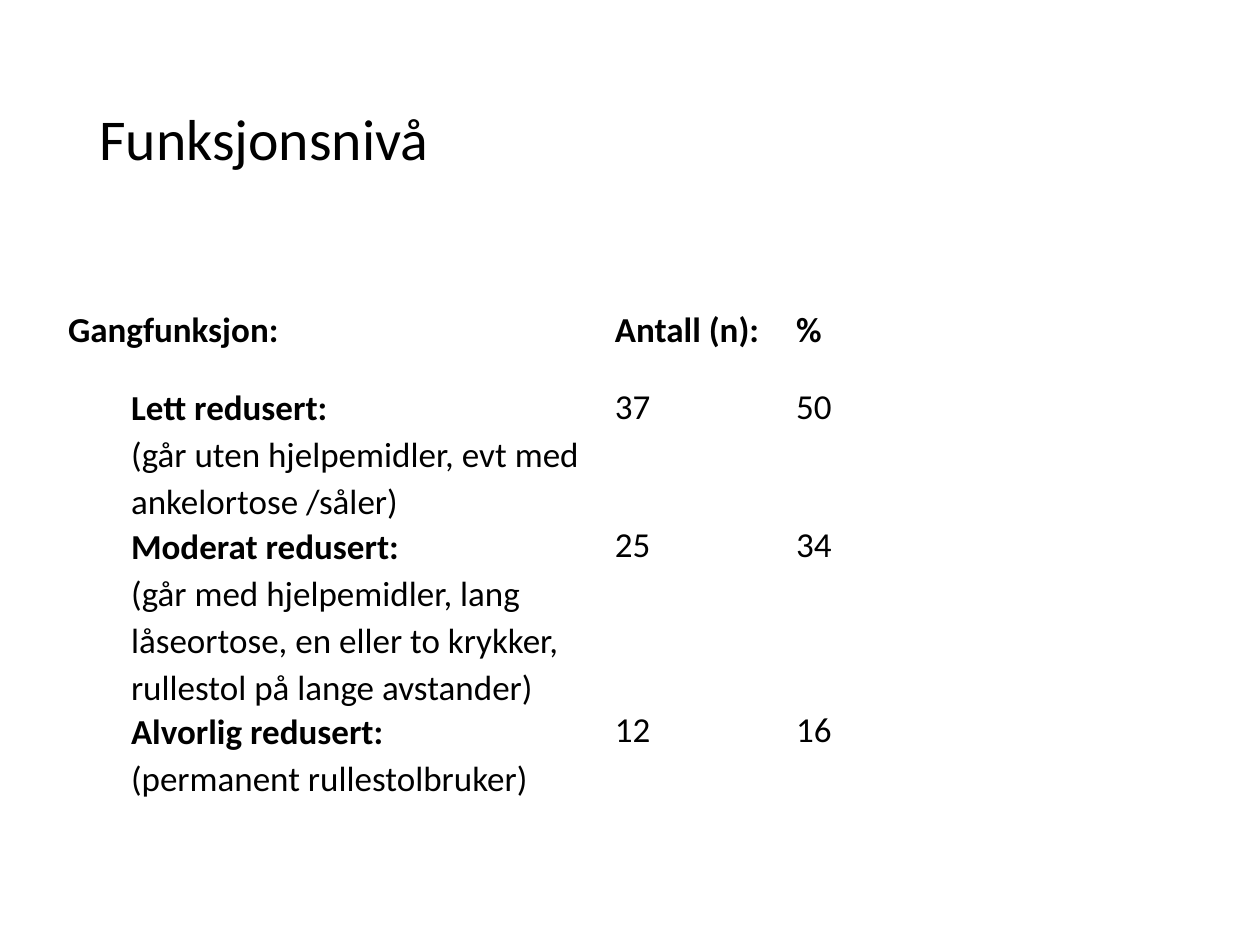
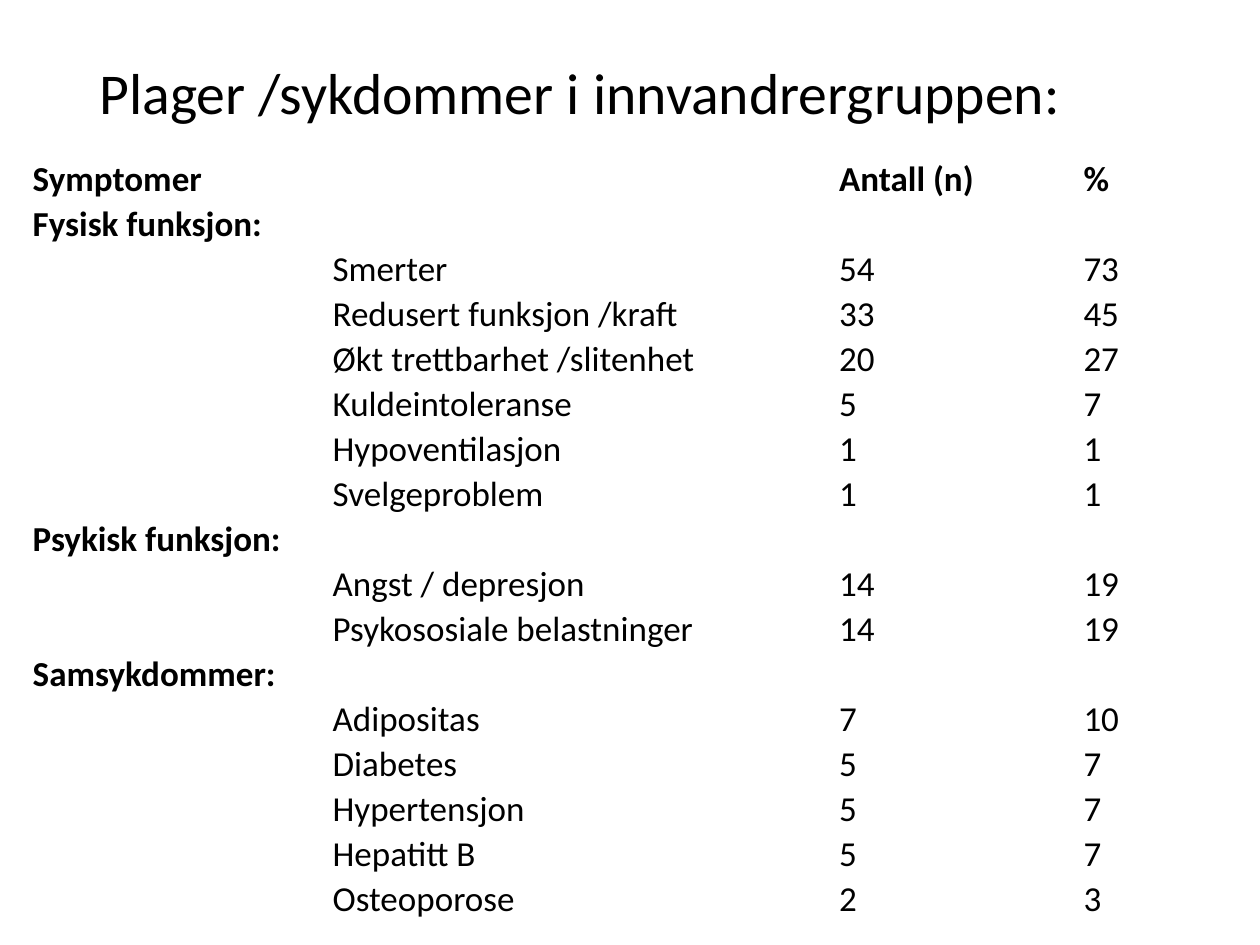
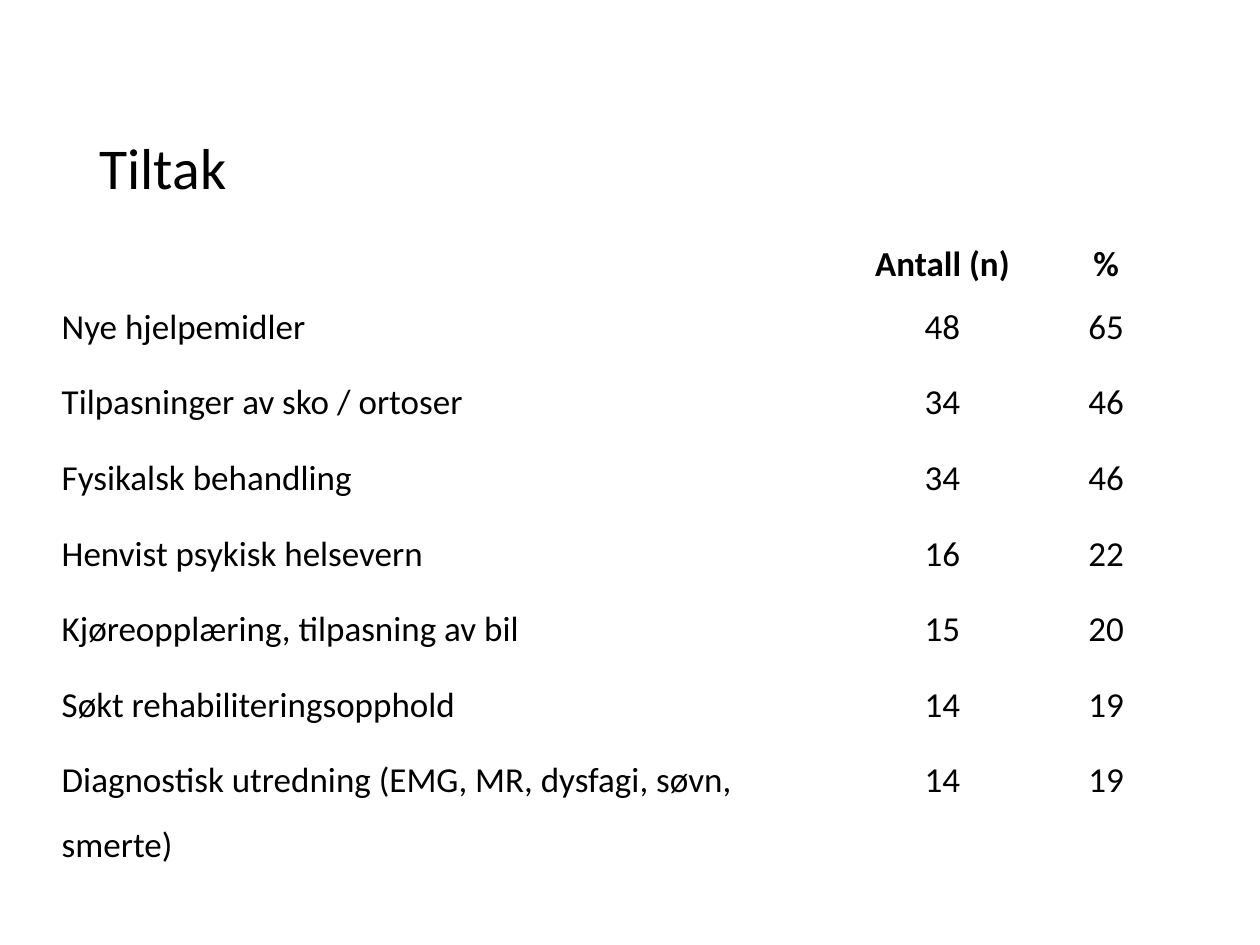
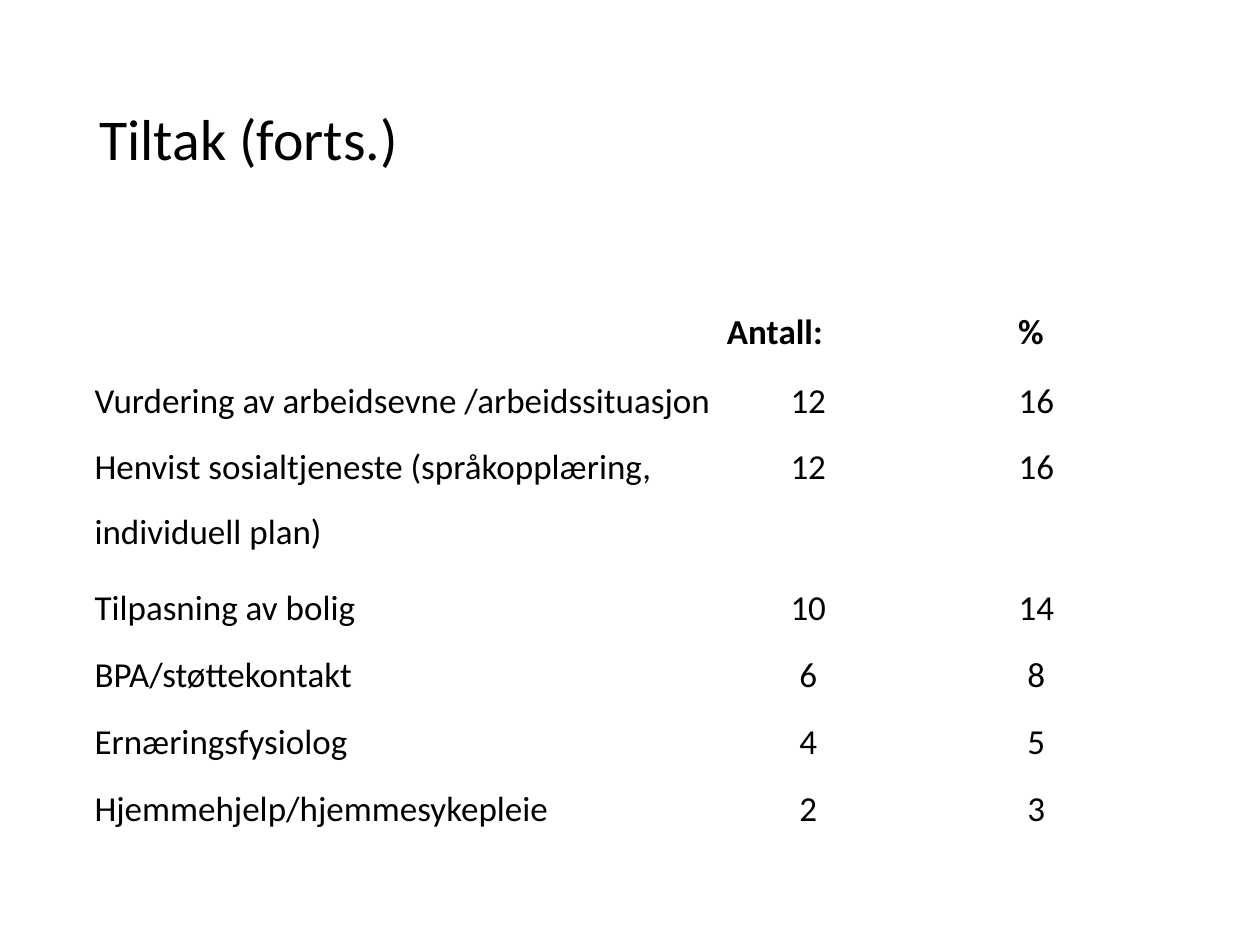
"""Build four slides of tables on function level, symptoms and measures."""
from dataclasses import dataclass, replace

from pptx import Presentation
from pptx.dml.color import RGBColor
from pptx.enum.text import MSO_ANCHOR, PP_ALIGN as Align
from pptx.slide import Slide
from pptx.table import _Cell as Cell
from pptx.util import Inches, Pt

COLORS = {"text": "000000", "background": "FFFFFF"}
FONT = "Calibri"
TITLE_SIZE = 33
TABLE_SIZE = 20
TITLE_LEFT, TITLE_WIDTH = 0.69, 8.62


@dataclass(frozen=True)
class ParaStyle:
    bold: bool = False
    spacing: float = 1.07
    after: float = 8
    align: Align = Align.LEFT
    indent: float = 0
    size: float = TABLE_SIZE


@dataclass(frozen=True)
class TableSlide:
    title: str
    title_top: float
    title_height: float
    left: float
    top: float
    columns: tuple[float, ...]
    heights: tuple[float, ...]
    header_styles: tuple[tuple[ParaStyle, ...], ...]
    body_styles: tuple[tuple[ParaStyle, ...], ...]
    rows: tuple[tuple[str, ...], ...]
    header_margins: tuple[float, float] = (0.06, 0)


TITLE = ParaStyle(spacing=0.9, after=0, size=TITLE_SIZE)
PLAIN = ParaStyle()
BOLD = ParaStyle(bold=True)
LEVEL = ParaStyle(bold=True, spacing=1.1, after=0, indent=0.5)
LEVEL_NOTE = replace(LEVEL, bold=False, after=6)
MEASURE = ParaStyle(spacing=1.5)
MEASURE_VALUE = replace(MEASURE, align=Align.CENTER)
MEASURE_HEAD = replace(MEASURE_VALUE, bold=True, spacing=2.0)
COUNT_HEAD = ParaStyle(bold=True, spacing=1.0, after=0)
PERCENT_HEAD = replace(COUNT_HEAD, indent=0.88)
MEASURE_COLUMNS = ((MEASURE,), (MEASURE_VALUE,), (MEASURE_VALUE,))

SLIDES = (
    TableSlide(
        "Funksjonsnivå", 0.4, 1.45, 0.48, 2.43,
        (4.34, 1.44, 2.84), (0.61, 1.02, 1.39, 0.92),
        ((BOLD,),) * 3,
        ((LEVEL, LEVEL_NOTE), (PLAIN,), (PLAIN,)),
        (
            ("Gangfunksjon:", "Antall (n):", "%"),
            ("Lett redusert:\n(går uten hjelpemidler, evt med ankelortose /såler)", "37", "50"),
            ("Moderat redusert:\n(går med hjelpemidler, lang låseortose, en eller to krykker, "
             "rullestol på lange avstander)", "25", "34"),
            ("Alvorlig redusert:\n(permanent rullestolbruker)", "12", "16"),
        ),
    ),
    TableSlide(
        "Plager /sykdommer i innvandrergruppen:", 0.29, 0.94, 0.2, 1.23,
        (2.38, 4.02, 1.94, 1.19), (0.35,) * 17,
        ((BOLD,),) * 4,
        ((BOLD,), (PLAIN,), (PLAIN,), (PLAIN,)),
        (
            ("Symptomer", "", "Antall (n)", "%"),
            ("Fysisk funksjon:", "", "", ""),
            ("", "Smerter", "54", "73"),
            ("", "Redusert funksjon /kraft", "33", "45"),
            ("", "Økt trettbarhet /slitenhet", "20", "27"),
            ("", "Kuldeintoleranse", "5", "7"),
            ("", "Hypoventilasjon", "1", "1"),
            ("", "Svelgeproblem", "1", "1"),
            ("Psykisk funksjon:", "", "", ""),
            ("", "Angst / depresjon", "14", "19"),
            ("", "Psykososiale belastninger", "14", "19"),
            ("Samsykdommer:", "", "", ""),
            ("", "Adipositas", "7", "10"),
            ("", "Diabetes", "5", "7"),
            ("", "Hypertensjon", "5", "7"),
            ("", "Hepatitt B", "5", "7"),
            ("", "Osteoporose", "2", "3"),
        ),
    ),
    TableSlide(
        "Tiltak", 0.82, 1.07, 0.43, 1.59,
        (6.37, 1.36, 1.24), (0.6,) * 8,
        ((MEASURE_HEAD,),) * 3,
        MEASURE_COLUMNS,
        (
            ("", "Antall (n)", "%"),
            ("Nye hjelpemidler", "48", "65"),
            ("Tilpasninger av sko / ortoser", "34", "46"),
            ("Fysikalsk behandling", "34", "46"),
            ("Henvist psykisk helsevern", "16", "22"),
            ("Kjøreopplæring, tilpasning av bil", "15", "20"),
            ("Søkt rehabiliteringsopphold", "14", "19"),
            ("Diagnostisk utredning (EMG, MR, dysfagi, søvn, smerte)", "14", "19"),
        ),
    ),
    TableSlide(
        "Tiltak (forts.)", 0.4, 1.45, 0.69, 2.43,
        (5.01, 1.43, 2.19), (0.4, 0.53, 1.12) + (0.53,) * 4,
        ((COUNT_HEAD,), (COUNT_HEAD,), (PERCENT_HEAD,)),
        MEASURE_COLUMNS,
        (
            ("", "Antall:", "%"),
            ("Vurdering av arbeidsevne /arbeidssituasjon", "12", "16"),
            ("Henvist sosialtjeneste (språkopplæring, individuell plan)", "12", "16"),
            ("Tilpasning av bolig", "10", "14"),
            ("BPA/støttekontakt", "6", "8"),
            ("Ernæringsfysiolog", "4", "5"),
            ("Hjemmehjelp/hjemmesykepleie", "2", "3"),
        ),
        header_margins=(0.07, 0.04),
    ),
)


def write(frame, text: str, styles: tuple[ParaStyle, ...]) -> None:
    frame.text = text
    for para, style in zip(frame.paragraphs, styles):
        para.alignment = style.align
        para.line_spacing = style.spacing
        para.space_before = Pt(0)
        para.space_after = Pt(style.after)
        if style.indent:
            properties = para._p.get_or_add_pPr()
            properties.set("marL", str(Inches(style.indent)))
            properties.set("indent", "0")
        para.font.name = FONT
        para.font.size = Pt(style.size)
        para.font.bold = style.bold
        para.font.color.rgb = RGBColor.from_string(COLORS["text"])


def add_title(page: Slide, layout: TableSlide) -> None:
    box = page.shapes.add_textbox(Inches(TITLE_LEFT), Inches(layout.title_top),
                                  Inches(TITLE_WIDTH), Inches(layout.title_height))
    box.text_frame.word_wrap = True
    box.text_frame.vertical_anchor = MSO_ANCHOR.MIDDLE
    write(box.text_frame, layout.title, (TITLE,))


def fill_cell(cell: Cell, text: str, styles: tuple[ParaStyle, ...],
              margins: tuple[float, float]) -> None:
    side, end = margins
    cell.margin_left = cell.margin_right = Inches(side)
    cell.margin_top = cell.margin_bottom = Inches(end)
    cell.fill.background()
    write(cell.text_frame, text, styles)


def add_table(page: Slide, layout: TableSlide) -> None:
    table = page.shapes.add_table(
        len(layout.rows), len(layout.columns), Inches(layout.left), Inches(layout.top),
        Inches(sum(layout.columns)), Inches(sum(layout.heights))).table
    table.first_row = table.horz_banding = False
    for column, width in zip(table.columns, layout.columns):
        column.width = Inches(width)
    for index, (row, height, texts) in enumerate(zip(table.rows, layout.heights, layout.rows)):
        row.height = Inches(height)
        styles = layout.body_styles if index else layout.header_styles
        margins = (0.06, 0) if index else layout.header_margins
        for cell, text, paras in zip(row.cells, texts, styles):
            fill_cell(cell, text, paras, margins)


def main() -> None:
    deck = Presentation()
    deck.slide_width, deck.slide_height = Inches(10), Inches(7.5)
    for layout in SLIDES:
        page = deck.slides.add_slide(deck.slide_layouts[6])
        page.background.fill.solid()
        page.background.fill.fore_color.rgb = RGBColor.from_string(COLORS["background"])
        add_title(page, layout)
        add_table(page, layout)
    deck.save("out.pptx")


if __name__ == "__main__":
    main()
